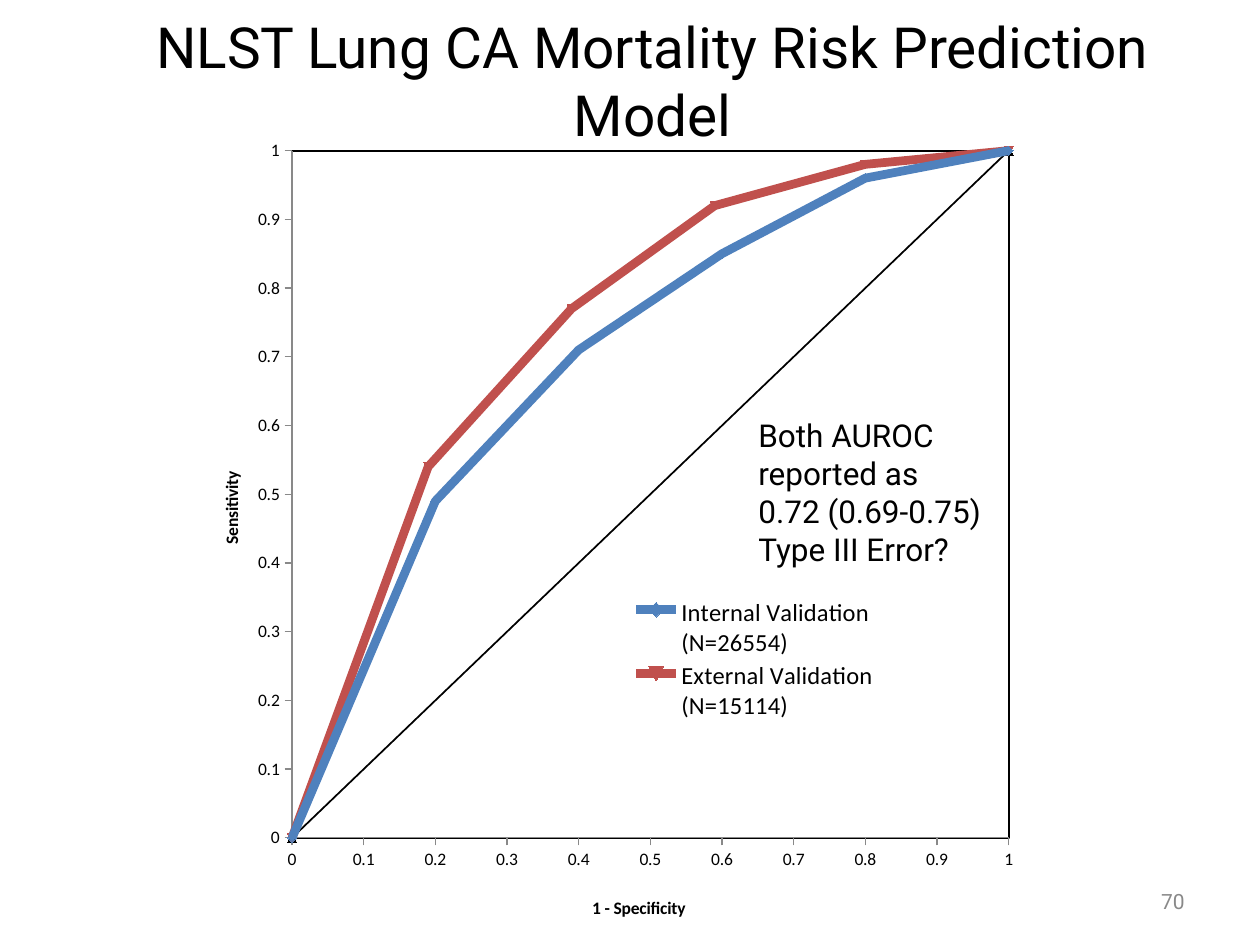
from lxml.etree import SubElement
from pptx import Presentation
from pptx.chart.data import XyChartData
from pptx.dml.color import RGBColor
from pptx.enum.chart import XL_CHART_TYPE as Kind, XL_LEGEND_POSITION as Side, XL_TICK_MARK as Tick
from pptx.enum.text import MSO_ANCHOR as Anchor, PP_ALIGN as Align
from pptx.oxml import parse_xml
from pptx.oxml.ns import nsdecls, qn
from pptx.util import Emu, Pt

SCALE = 914400 // 126
COLORS = {"black": "000000", "white": "FFFFFF", "blue": "4F81BD",
          "red": "C0504D", "gray": "898989"}
TITLE = "NLST Lung CA Mortality Risk Prediction Model"
NOTE = "Both AUROC reported as 0.72 (0.69-0.75) Type III Error?"
PAGE = "70"
# name, color, line width in points, x values, y values
SERIES = [
    ("Internal Validation (N=26554)", "blue", 5,
     [0, 0.2, 0.4, 0.6, 0.8, 1], [0, 0.49, 0.71, 0.85, 0.96, 1]),
    ("External Validation (N=15114)", "red", 5,
     [0, 0.19, 0.39, 0.59, 0.8, 1], [0, 0.54, 0.77, 0.92, 0.98, 1]),
    ("Series 3", "black", 1, [0, 1], [0, 1]),
]
CHART = (210, 126, 873, 798)
# left, top, width, height on the slide
PLOT = (292, 151, 717, 689)
LEGEND = (632, 595, 246, 131)
X_TITLE = (589, 895)
Y_TITLE = (217, 469)


def px(n):
    return Emu(n * SCALE)


def rgb(name):
    return RGBColor.from_string(COLORS[name])


def add_text(slide, text, box, size, color="black", align=Align.LEFT,
             anchor=Anchor.TOP, fill=None):
    shape = slide.shapes.add_textbox(*map(px, box))
    if fill:
        shape.fill.solid()
        shape.fill.fore_color.rgb = rgb(fill)
    frame = shape.text_frame
    frame.word_wrap = True
    frame.vertical_anchor = anchor
    para = frame.paragraphs[0]
    para.alignment = align
    run = para.add_run()
    run.text = text
    run.font.name = "Roboto"
    run.font.size = Pt(size)
    run.font.color.rgb = rgb(color)


def place(element, after, box, inner=False):
    """Give a chart part a fixed position, from slide px to chart fractions."""
    for old in element.findall(qn("c:layout")):
        element.remove(old)
    layout = parse_xml(f"<c:layout {nsdecls('c')}><c:manualLayout/></c:layout>")
    rules = [("layoutTarget", "inner")] if inner else []
    rules += [("xMode", "edge"), ("yMode", "edge")]
    starts = (CHART[0], CHART[1], 0, 0)
    spans = CHART[2:] * 2
    rules += [(key, f"{(n - start) / span:.3f}")
              for key, n, start, span in zip("xywh", box, starts, spans)]
    for key, val in rules:
        SubElement(layout[0], qn(f"c:{key}")).set("val", val)
    prior = element.find(qn(f"c:{after}")) if after else None
    element.insert(0 if prior is None else element.index(prior) + 1, layout)


def set_axis(axis, text, spot):
    axis.minimum_scale, axis.maximum_scale, axis.major_unit = 0, 1, 0.1
    axis.has_major_gridlines = False
    axis.major_tick_mark, axis.minor_tick_mark = Tick.OUTSIDE, Tick.NONE
    axis.format.line.color.rgb = rgb("gray")
    axis.tick_labels.number_format = "General"
    axis.tick_labels.number_format_is_linked = False
    axis.has_title = True
    frame = axis.axis_title.text_frame
    frame.text = text
    font = frame.paragraphs[0].runs[0].font
    font.name, font.size, font.bold = "Calibri", Pt(10), True
    font.color.rgb = rgb("black")
    place(axis.axis_title._element, "tx", spot)


def add_roc(slide):
    data = XyChartData()
    for name, _, _, xs, ys in SERIES:
        series = data.add_series(name)
        for x, y in zip(xs, ys):
            series.add_data_point(x, y)
    chart = slide.shapes.add_chart(Kind.XY_SCATTER_LINES, *map(px, CHART), data).chart
    chart.has_title = False
    chart.font.name, chart.font.size = "Calibri", Pt(10)
    chart.font.color.rgb = rgb("black")
    chart.plots[0].vary_by_categories = False

    for series, (_, color, width, _, _) in zip(chart.plots[0].series, SERIES):
        series.smooth = False
        series.format.line.color.rgb = rgb(color)
        series.format.line.width = Pt(width)
        mark = series.marker.format
        mark.fill.solid()
        mark.fill.fore_color.rgb = rgb(color)
        mark.line.color.rgb = rgb(color)

    set_axis(chart.category_axis, "1 - Specificity", X_TITLE)
    set_axis(chart.value_axis, "Sensitivity", Y_TITLE)

    chart.has_legend = True
    legend = chart.legend
    legend.position, legend.include_in_layout = Side.RIGHT, True
    legend.font.size = Pt(14)
    hidden = parse_xml(f'<c:legendEntry {nsdecls("c")}><c:idx val="2"/>'
                       '<c:delete val="1"/></c:legendEntry>')
    legend._element.find(qn("c:legendPos")).addnext(hidden)
    place(legend._element, "legendEntry", LEGEND)

    area = chart._chartSpace.chart.plotArea
    place(area, None, PLOT, inner=True)
    area.append(parse_xml(
        f'<c:spPr {nsdecls("c", "a")}><a:noFill/><a:ln w="12700"><a:solidFill>'
        f'<a:srgbClr val="{COLORS["black"]}"/></a:solidFill></a:ln></c:spPr>'))


def main():
    deck = Presentation()
    deck.slide_width, deck.slide_height = px(1260), px(945)
    slide = deck.slides.add_slide(deck.slide_layouts[6])
    add_roc(slide)
    add_text(slide, TITLE, (73, 5, 1159, 149), 32.4,
             align=Align.CENTER, anchor=Anchor.MIDDLE)
    add_text(slide, NOTE, (746, 410, 252, 165), 18, fill="white")
    add_text(slide, PAGE, (903, 876, 294, 50), 12, "gray",
             Align.RIGHT, Anchor.MIDDLE)
    deck.save("out.pptx")


if __name__ == "__main__":
    main()
